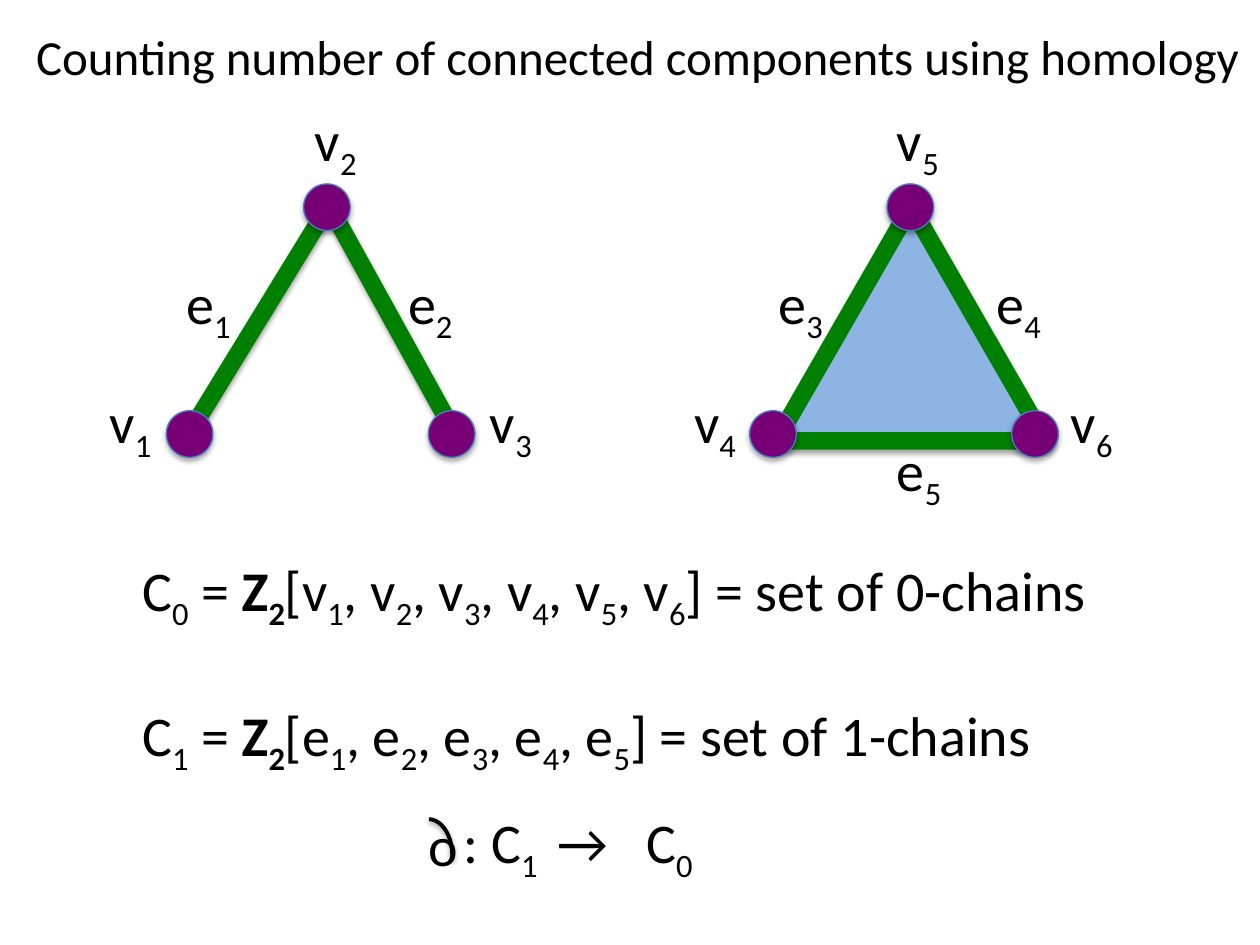
"""Build a slide on counting connected components using homology."""
from lxml import etree
from pptx import Presentation, oxml
from pptx import util as u
from pptx.dml.color import RGBColor
from pptx.enum import shapes, text
from pptx.oxml.ns import nsdecls, qn

BLACK = RGBColor(0x00, 0x00, 0x00)
PURPLE = RGBColor(0x77, 0x00, 0x77)
GREEN = RGBColor(0x00, 0x80, 0x00)
SKY = RGBColor(0x8E, 0xB4, 0xE3)
OUTLINE = RGBColor(0x4B, 0x7E, 0xBC)
FONT = "Calibri"
DOT = 0.37


def cast_shadow(shape, distance, opacity):
    """Append a soft downward shadow, distance in points and opacity in percent."""
    shape.element.spPr.append(oxml.parse_xml(
        f'<a:effectLst {nsdecls("a")}><a:outerShdw blurRad="{u.Pt(3.1)}" '
        f'dist="{u.Pt(distance)}" dir="5400000" rotWithShape="0">'
        f'<a:srgbClr val="{BLACK}"><a:alpha val="{opacity * 1000}"/></a:srgbClr>'
        '</a:outerShdw></a:effectLst>'))


def add_text(parent, place, *lines):
    """Add a text box; | alternates normal and subscript runs, * marks bold."""
    box = parent.add_textbox(*map(u.Inches, place))
    frame = box.text_frame
    frame.word_wrap = True
    frame.auto_size = text.MSO_AUTO_SIZE.SHAPE_TO_FIT_TEXT
    for row, line in enumerate(lines):
        para = frame.add_paragraph() if row else frame.paragraphs[0]
        para.space_before = u.Pt(39 if row else 0)
        for index, piece in enumerate(line.split("|")):
            if not piece:
                continue
            span = para.add_run()
            span.text = piece.lstrip("*")
            span.font.name = FONT
            span.font.size = u.Pt(32)
            span.font.bold = piece.startswith("*")
            span.font.color.rgb = BLACK
            if index % 2:
                span.font._element.set("baseline", "-25000")
    return box


deck = Presentation()
deck.slide_width, deck.slide_height = u.Inches(10), u.Inches(7.5)
page = deck.slides.add_slide(deck.slide_layouts[5])

title = page.shapes.title
title.left, title.top = u.Inches(0.12), u.Inches(0.16)
title.width, title.height = u.Inches(9.88), u.Inches(0.57)
title.text_frame.auto_size = text.MSO_AUTO_SIZE.NONE
title.text_frame.vertical_anchor = text.MSO_ANCHOR.TOP
para = title.text_frame.paragraphs[0]
para.alignment = text.PP_ALIGN.CENTER
span = para.add_run()
span.text = "Counting number of connected components using homology"
span.font.name = FONT
span.font.size = u.Pt(28)
span.font.color.rgb = BLACK

filled_graph = page.shapes.add_group_shape().shapes
open_graph = page.shapes.add_group_shape().shapes

triangle = filled_graph.add_shape(
    shapes.MSO_SHAPE.ISOSCELES_TRIANGLE, *map(u.Inches, (6.16, 1.64, 2.14, 1.86)))
triangle.fill.solid()
triangle.fill.fore_color.rgb = SKY
triangle.line.color.rgb = GREEN
triangle.line.width = u.Pt(10)
cast_shadow(triangle, 1.8, 35)

for foot in (3.61, 1.5):
    edge = open_graph.add_connector(
        shapes.MSO_CONNECTOR.STRAIGHT, *map(u.Inches, (2.61, 1.63, foot, 3.44)))
    edge.line.color.rgb = GREEN
    edge.line.width = u.Pt(10)
    cast_shadow(edge, 1.6, 38)

graphs = [
    (filled_graph, 5.95, [("v|6", 8.4, 3.03), ("v|4", 5.41, 3.03), ("v|5", 7.02, 0.79),
                          ("e|3", 6.08, 2.08), ("e|5", 7.02, 3.41), ("e|4", 7.81, 2.08)]),
    (open_graph, 1.32, [("v|1", 0.77, 3.03), ("v|2", 2.4, 0.79), ("v|3", 3.79, 3.03),
                        ("e|1", 1.38, 2.08), ("e|2", 3.14, 2.08)]),
]
for graph, left, labels in graphs:
    for across, top in ((0, 3.26), (2.08, 3.26), (1.09, 1.46)):
        vertex = graph.add_shape(
            shapes.MSO_SHAPE.OVAL, *map(u.Inches, (left + across, top, DOT, DOT)))
        vertex.fill.solid()
        vertex.fill.fore_color.rgb = PURPLE
        vertex.line.color.rgb = OUTLINE
        vertex.line.width = u.Pt(0.75)
        cast_shadow(vertex, 1.8, 35)
    for label, label_left, label_top in labels:
        add_text(graph, (label_left, label_top, 0.71, 0.64), label)

boundary = page.shapes.add_group_shape().shapes
mapping = add_text(boundary, (3.58, 6.36, 2.7, 0.64), ": C|1|\t→\tC|0")
tabs = etree.SubElement(
    mapping.text_frame.paragraphs[0]._p.get_or_add_pPr(), qn("a:tabLst"))
for stop in (0.75, 1.45):
    etree.SubElement(tabs, qn("a:tab"), pos=str(u.Inches(stop)), algn="l")
arc = boundary.add_shape(shapes.MSO_SHAPE.ARC, *map(u.Inches, (3.18, 6.5, 0.41, 0.62)))
arc.rotation = 4
arc.fill.background()
arc.line.color.rgb = BLACK
arc.line.width = u.Pt(2.25)
cast_shadow(arc, 1.6, 38)
add_text(boundary, (3.3, 6.38, 0.65, 0.64), "o")

add_text(page.shapes, (1.03, 4.36, 8.49, 1.72),
         "C|0| = ||*Z|*2|[v|1|, v|2|, v|3|, v|4|, v|5|, v|6|] = set of 0-chains",
         "C|1| = ||*Z|*2|[e|1|, e|2|, e|3|, e|4|, e|5|] = set of 1-chains")

deck.save("out.pptx")
